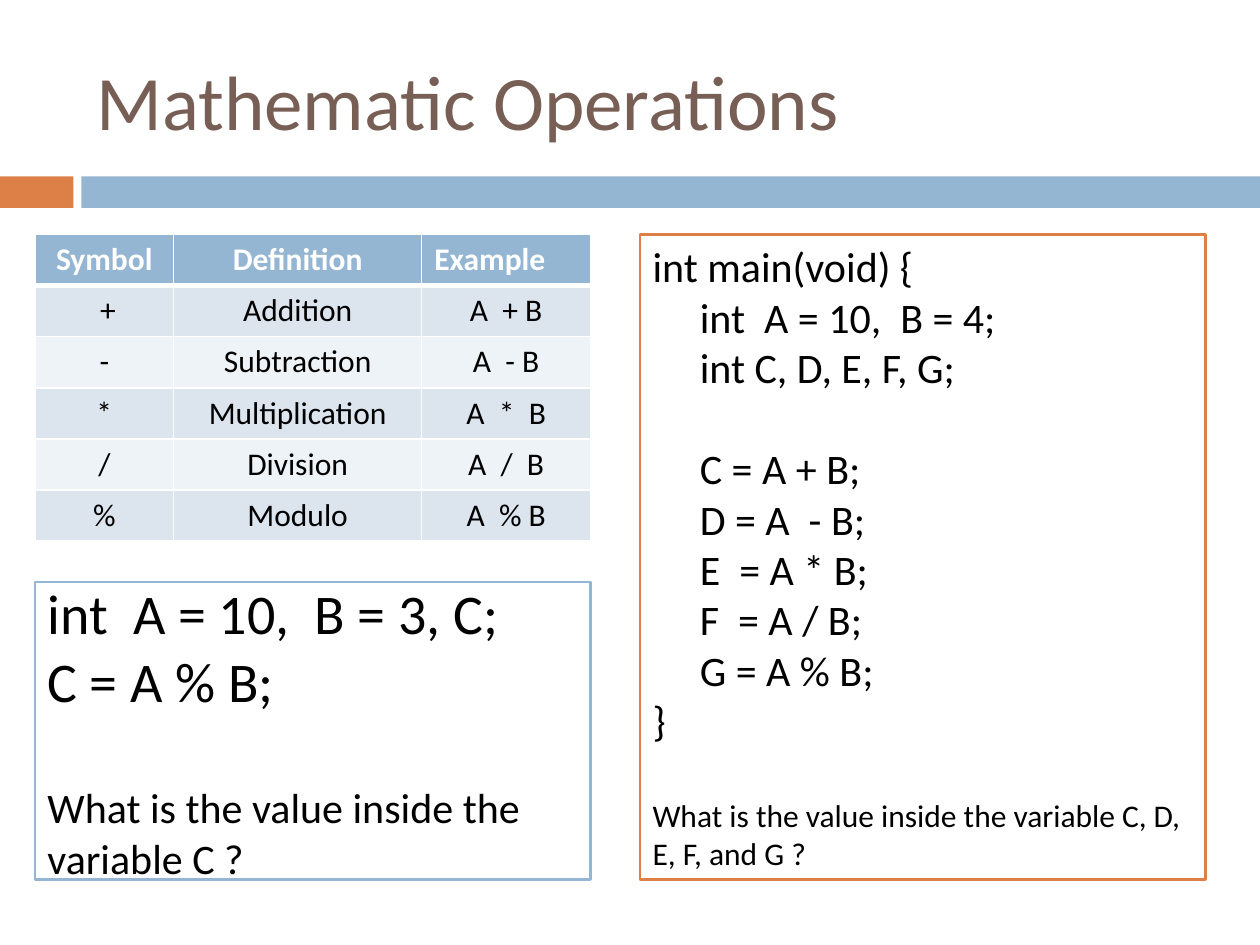
from pptx import Presentation
from pptx.dml.color import RGBColor
from pptx.enum.shapes import MSO_SHAPE
from pptx.enum.text import MSO_ANCHOR, PP_ALIGN
from pptx.oxml import parse_xml
from pptx.oxml.ns import nsdecls
from pptx.util import Pt

BLUE, ORANGE, WHITE, BLACK = "94B6D2", "DD8047", "FFFFFF", "000000"


def color(value):
    return RGBColor.from_string(value)


def add_text(paragraph, text, size, text_color=BLACK, bold=False):
    run = paragraph.add_run()
    run.text = text
    run.font.name = "Calibri"
    run.font.size = Pt(size)
    run.font.bold = bold
    run.font.color.rgb = color(text_color)


presentation = Presentation()
presentation.slide_width, presentation.slide_height = Pt(720), Pt(540)
slide = presentation.slides.add_slide(presentation.slide_layouts[6])

# Divider bars
for left, width, fill in [(0, 42, ORANGE), (46.5, 673.5, BLUE)]:
    shape = slide.shapes.add_shape(MSO_SHAPE.RECTANGLE, Pt(left), Pt(100.8), Pt(width), Pt(18))
    shape.shadow.inherit = False
    shape.fill.solid()
    shape.fill.fore_color.rgb = color(fill)
    shape.line.fill.background()

# Title
title = slide.shapes.add_textbox(Pt(48), Pt(18), Pt(642), Pt(78))
title.text_frame.word_wrap = True
title.text_frame.vertical_anchor = MSO_ANCHOR.MIDDLE
add_text(title.text_frame.paragraphs[0], "Mathematic Operations", 44, "775F55")

# Table of operators
rows = [
    ("Symbol", "Definition", "Example"),
    (" +", "Addition", "A  + B"),
    ("-", "Subtraction", "A  - B"),
    ("*", "Multiplication", "A  *  B"),
    ("/", "Division", "A  /  B"),
    ("%", "Modulo", "A  % B"),
]
table = slide.shapes.add_table(len(rows), 3, Pt(20), Pt(134), Pt(317.5), Pt(175.2)).table
for column, width in zip(table.columns, (79.2, 141.8, 96.5)):
    column.width = Pt(width)
for row_index, row in enumerate(rows):
    header = row_index == 0
    table.rows[row_index].height = Pt(29.2)
    fill = BLUE if header else ("EEF3F7", "DCE5EE")[row_index % 2]
    for column_index, text in enumerate(row):
        cell = table.cell(row_index, column_index)
        paragraph = cell.text_frame.paragraphs[0]
        left_aligned = header and column_index == 2
        paragraph.alignment = PP_ALIGN.LEFT if left_aligned else PP_ALIGN.CENTER
        add_text(paragraph, text, 18, WHITE if header else BLACK, header)
        # White borders, thicker between header and body
        properties = cell._tc.get_or_add_tcPr()
        for side in "LRTB":
            thick = (header and side == "B") or (row_index == 1 and side == "T")
            properties.append(parse_xml(
                f'<a:ln{side} {nsdecls("a")} w="{Pt(3 if thick else 1)}"><a:solidFill>'
                f'<a:srgbClr val="{WHITE}"/></a:solidFill></a:ln{side}>'))
        cell.fill.solid()
        cell.fill.fore_color.rgb = color(fill)

# Code boxes: each line is text, size, indent, space before
question_lines = [
    ("int  A = 10,  B = 3, C;", 32, 0, 0),
    ("C = A % B;", 32, 0, 0),
    ("What is the value inside the variable C ?", 24, 0, 39),
]
program_lines = [
    ("int main(void) {", 24, 0, 0),
    ("int  A = 10,  B = 4;", 24, 27, 0),
    ("int C, D, E, F, G;", 24, 27, 0),
    ("C = A + B;", 24, 27, 29),
    ("D = A  - B;", 24, 27, 0),
    ("E  = A * B;", 24, 27, 0),
    ("F  = A / B;", 24, 27, 0),
    ("G = A % B;", 24, 27, 0),
    ("}", 24, 0, 0),
    ("What is the value inside the variable C, D, E, F, and G ?", 18, 0, 29),
]
boxes = [
    (20, 332.5, 317.5, 170, BLUE, MSO_ANCHOR.MIDDLE, question_lines),
    (365.8, 134, 323.2, 368.5, ORANGE, MSO_ANCHOR.TOP, program_lines),
]
for left, top, width, height, outline, anchor, lines in boxes:
    shape = slide.shapes.add_shape(MSO_SHAPE.RECTANGLE, Pt(left), Pt(top), Pt(width), Pt(height))
    shape.shadow.inherit = False
    shape.fill.solid()
    shape.fill.fore_color.rgb = color(WHITE)
    shape.line.color.rgb = color(outline)
    shape.line.width = Pt(1.5)
    frame = shape.text_frame
    frame.word_wrap = True
    frame.vertical_anchor = anchor
    for index, (text, size, indent, space) in enumerate(lines):
        paragraph = frame.add_paragraph() if index else frame.paragraphs[0]
        paragraph.alignment = PP_ALIGN.LEFT
        paragraph.space_before = Pt(space)
        paragraph._p.get_or_add_pPr().set("marL", str(Pt(indent)))
        add_text(paragraph, text, size)

presentation.save("out.pptx")
